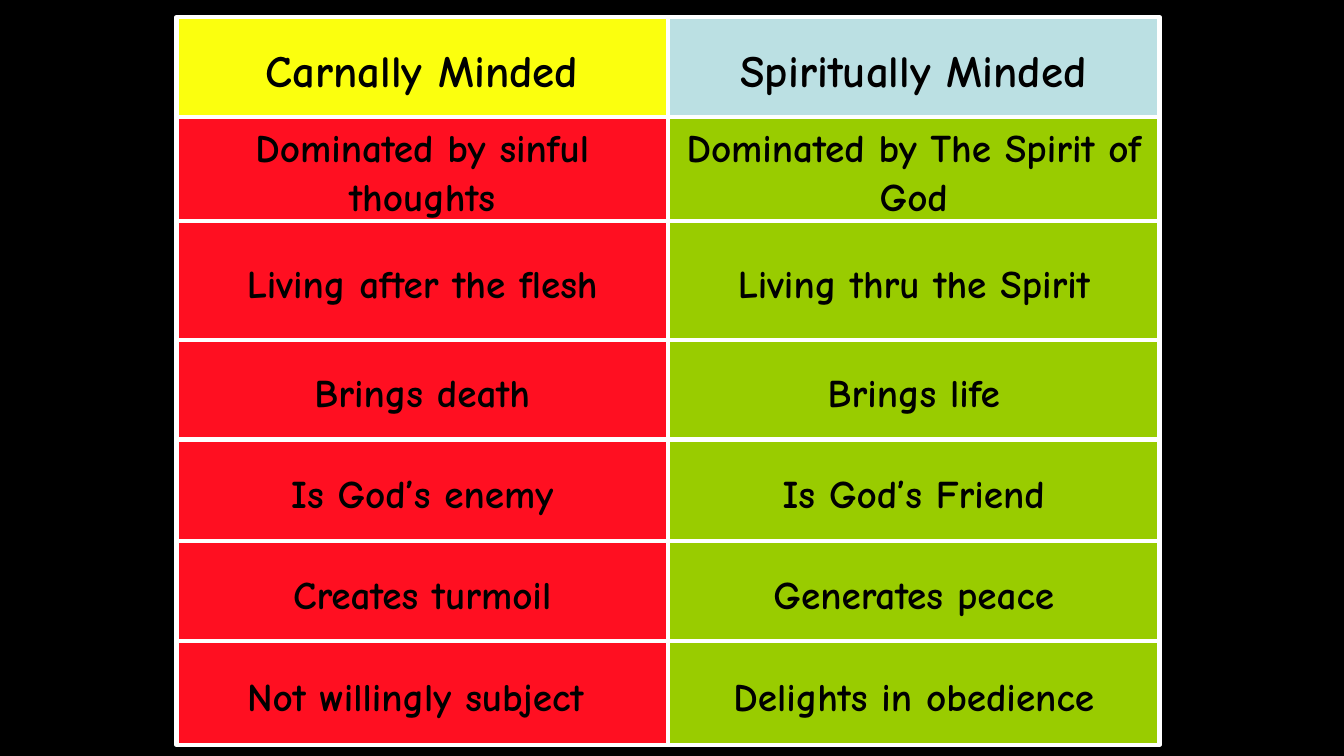
from itertools import accumulate

from lxml import etree
from pptx import Presentation
from pptx.dml.color import RGBColor
from pptx.enum.shapes import MSO_CONNECTOR, MSO_SHAPE
from pptx.enum.text import MSO_ANCHOR, PP_ALIGN
from pptx.oxml.ns import qn
from pptx.util import Inches, Pt

RECTANGLE = MSO_SHAPE.RECTANGLE
STRAIGHT = MSO_CONNECTOR.STRAIGHT
MIDDLE = MSO_ANCHOR.MIDDLE
CENTER = PP_ALIGN.CENTER

COLORS = {
    "background": "000000",
    "text": "000000",
    "rule": "FFFFFF",
    "carnal_head": "FBFF0E",
    "spirit_head": "BBE0E3",
    "carnal": "FF0F21",
    "spirit": "99CC00",
}
FONT = "Comic Neue"
LEFT, TOP, COLUMN_WIDTH = 1.75, 0.17, 4.875
RULE_WIDTH = Pt(3)

# Row height, carnal side, spiritual side; the trailing space shifts its centred line
CONTRASTS = [
    (0.99, "Carnally Minded", "Spiritually Minded"),
    (1.03, "Dominated by sinful thoughts", "Dominated by The Spirit of God"),
    (1.18, "Living after the flesh", "Living thru the Spirit"),
    (0.99, "Brings death", "Brings life"),
    (1.01, "Is God’s enemy", "Is God’s Friend"),
    (0.99, "Creates turmoil", "Generates peace"),
    (1.03, "Not willingly subject ", "Delights in obedience"),
]
row_edges = list(accumulate((height for height, _, _ in CONTRASTS), initial=TOP))
column_edges = [LEFT + column * COLUMN_WIDTH for column in range(3)]


def color(name):
    return RGBColor.from_string(COLORS[name])


prs = Presentation()
prs.slide_width = Inches(13.33)
prs.slide_height = Inches(7.5)
slide = prs.slides.add_slide(prs.slide_layouts[6])
slide.background.fill.solid()
slide.background.fill.fore_color.rgb = color("background")

for row, (height, *sides) in enumerate(CONTRASTS):
    is_head = row == 0
    for column, (mind, wording) in enumerate(zip(("carnal", "spirit"), sides)):
        panel = slide.shapes.add_shape(
            RECTANGLE, Inches(column_edges[column]), Inches(row_edges[row]),
            Inches(COLUMN_WIDTH), Inches(height),
        )
        panel.shadow.inherit = False
        panel.fill.solid()
        panel.fill.fore_color.rgb = color(f"{mind}_head" if is_head else mind)
        panel.line.color.rgb = color("rule")
        panel.line.width = RULE_WIDTH

        frame = panel.text_frame
        frame.word_wrap = True
        frame.vertical_anchor = MIDDLE
        frame.margin_top = Inches(0.08)
        frame.margin_bottom = Inches(0.05)
        paragraph = frame.paragraphs[0]
        paragraph.text = wording
        paragraph.alignment = CENTER
        paragraph.line_spacing = 1.04
        font = paragraph.runs[0].font
        font.name = FONT
        font.size = Pt(32 if is_head else 28)
        font.bold = True
        font.color.rgb = color("text")

row_rules = [(column_edges[0], y, column_edges[-1], y) for y in row_edges]
column_rules = [(x, row_edges[0], x, row_edges[-1]) for x in column_edges]
for ends in row_rules + column_rules:
    rule = slide.shapes.add_connector(STRAIGHT, *map(Inches, ends))
    rule.line.color.rgb = color("rule")
    rule.line.width = RULE_WIDTH
    etree.SubElement(rule._element.spPr, qn("a:effectLst"))

prs.save("out.pptx")
